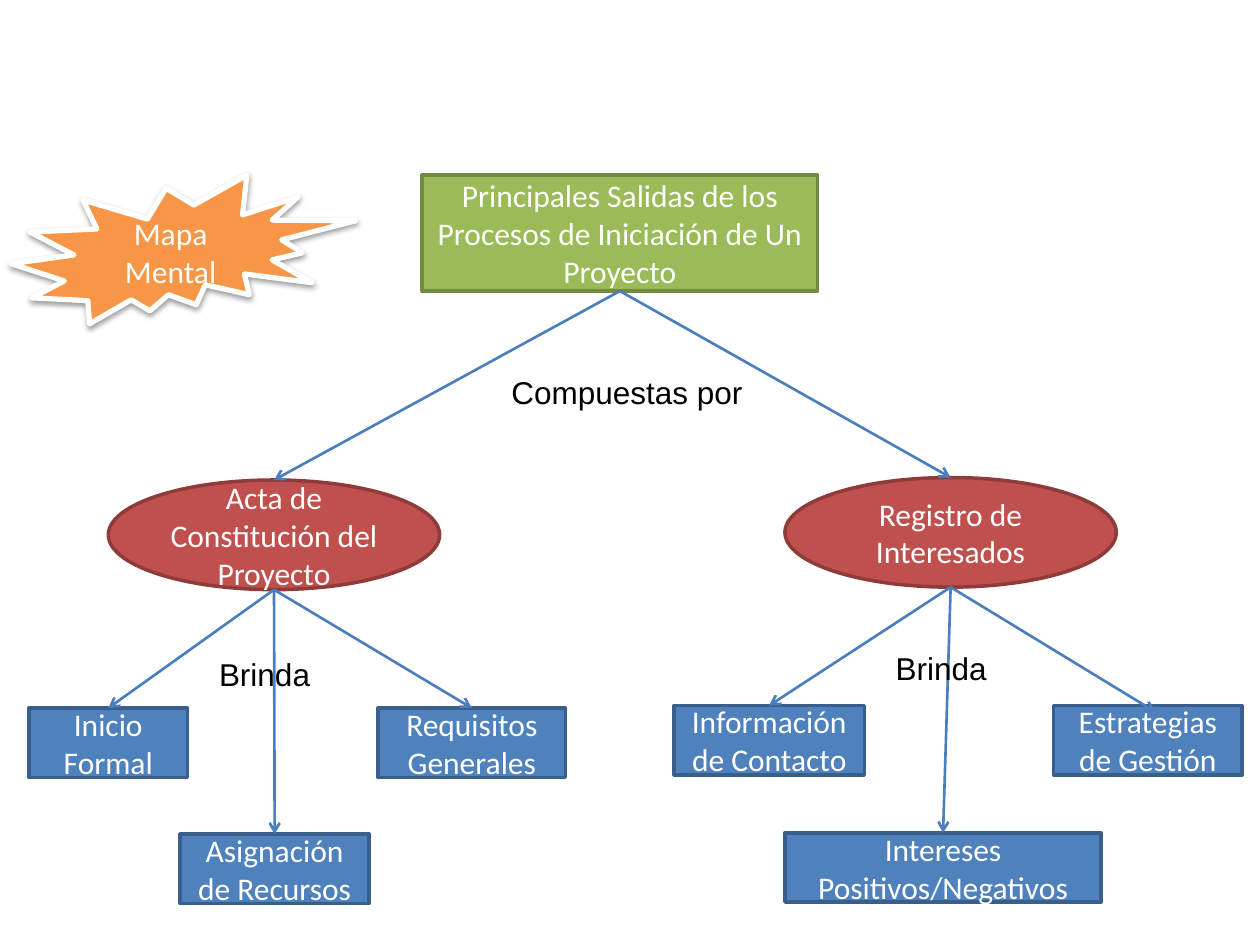
from pptx import Presentation, util as u
from pptx.dml.color import RGBColor
from pptx.enum import shapes, text
from pptx.oxml import parse_xml
from pptx.oxml.ns import nsdecls, qn

COLORS = {
    "root": ("9BBB59", "738A42"),
    "branch": ("C0504D", "8E3B39"),
    "leaf": ("4F81BD", "3A5F8C"),
    "title": ("F79646", "FFFFFF"),
    "arrow": "4B7EBC",
    "light": "FFFFFF",
    "dark": "000000",
}
COLUMNS, ROWS = 100, 75
TOP, BOTTOM = 0, 2
BRANCHES = [
    {
        "name": "Acta de Constitución del Proyecto",
        "box": (8.6, 38.1, 26.3, 8.7),
        "label": (16.4, 51.5, 10.7, 4),
        "leaves": [
            ("Inicio Formal", (2.3, 56.2, 12.6, 5.5), None),
            ("Asignación de Recursos", (14.3, 66.2, 15, 5.5), None),
            ("Requisitos Generales", (30, 56.2, 14.9, 5.5), None),
        ],
    },
    {
        "name": "Registro de Interesados",
        "box": (62.3, 37.9, 26.3, 8.7),
        "label": (70.1, 51, 10.7, 4),
        "leaves": [
            ("Información de Contacto", (53.5, 56, 15.1, 5.5), None),
            ("Intereses Positivos/Negativos", (62.3, 66.1, 25.1, 5.5), None),
            ("Estrategias de Gestión", (83.6, 56, 15, 5.5), (91.7, 56.5)),
        ],
    },
]


def write(shape, words, font="Calibri", size=18, color="light", align=text.PP_ALIGN.CENTER):
    """Put one formatted paragraph into a shape."""
    shape.text_frame.word_wrap = True
    paragraph = shape.text_frame.paragraphs[0]
    paragraph.text = words
    paragraph.alignment = align
    paragraph.font.name = font
    paragraph.font.size = u.Pt(size)
    paragraph.font.color.rgb = RGBColor.from_string(COLORS[color])


class MindMap:
    """Draw map elements on a slide measured in grid columns and rows."""

    def __init__(self, presentation):
        self.slide = presentation.slides.add_slide(presentation.slide_layouts[6])
        self.column = presentation.slide_width / COLUMNS
        self.row = presentation.slide_height / ROWS

    def place(self, *lengths):
        return [round(length * unit) for length, unit in zip(lengths, (self.column, self.row) * 2)]

    def node(self, kind, words, box, role, width=2):
        shape = self.slide.shapes.add_shape(kind, *self.place(*box))
        fill, line = COLORS[role]
        shape.fill.solid()
        shape.fill.fore_color.rgb = RGBColor.from_string(fill)
        shape.line.color.rgb = RGBColor.from_string(line)
        shape.line.width = u.Pt(width)
        shape.shadow.inherit = False
        shape.text_frame.vertical_anchor = text.MSO_ANCHOR.MIDDLE
        write(shape, words)
        return shape

    def burst(self, words, box):
        shape = self.node(shapes.MSO_SHAPE.EXPLOSION2, words, box, "title", width=3)
        shape._element.spPr.find(qn("a:effectLst")).append(parse_xml(
            f'<a:outerShdw {nsdecls("a")} blurRad="{u.Pt(3.1)}" dist="{u.Pt(1.6)}" dir="5400000" rotWithShape="0">'
            f'<a:srgbClr val="{COLORS["dark"]}"><a:alpha val="38000"/></a:srgbClr></a:outerShdw>'))

    def label(self, words, box):
        shape = self.slide.shapes.add_textbox(*self.place(*box))
        write(shape, words, font="Arial", color="dark", align=text.PP_ALIGN.LEFT)
        shape.text_frame.auto_size = text.MSO_AUTO_SIZE.SHAPE_TO_FIT_TEXT

    def arrow(self, parent, child, tip=None):
        start = parent.left + parent.width // 2, parent.top + parent.height
        end = self.place(*tip) if tip else (child.left + child.width // 2, child.top)
        connector = self.slide.shapes.add_connector(shapes.MSO_CONNECTOR.STRAIGHT, *start, *end)
        if parent.auto_shape_type == shapes.MSO_SHAPE.RECTANGLE:
            connector.begin_connect(parent, BOTTOM)
        if not tip:
            connector.end_connect(child, TOP)
        connector.line.color.rgb = RGBColor.from_string(COLORS["arrow"])
        connector.line.width = u.Pt(1.5)
        properties = connector._element.spPr
        properties.find(qn("a:ln")).append(parse_xml(f'<a:tailEnd {nsdecls("a")} type="arrow"/>'))
        properties.append(parse_xml(f'<a:effectLst {nsdecls("a")}/>'))


def main():
    presentation = Presentation()
    presentation.slide_width, presentation.slide_height = u.Inches(10), u.Inches(7.5)
    mind_map = MindMap(presentation)
    rectangle, oval = shapes.MSO_SHAPE.RECTANGLE, shapes.MSO_SHAPE.OVAL
    root = mind_map.node(rectangle, "Principales Salidas de los Procesos de Iniciación de Un Proyecto",
                         (33.5, 13.9, 31.4, 9.2), "root")
    for branch in BRANCHES:
        ellipse = mind_map.node(oval, branch["name"], branch["box"], "branch")
        mind_map.arrow(root, ellipse)
        for words, box, tip in branch["leaves"]:
            leaf = mind_map.node(rectangle, words, box, "leaf")
            mind_map.arrow(ellipse, leaf, tip)
        mind_map.label("Brinda", branch["label"])
    mind_map.label("Compuestas por", (39.6, 29.1, 25.2, 4))
    mind_map.burst("Mapa Mental", (0.9, 13.9, 27.3, 11.8))
    presentation.save("out.pptx")


if __name__ == "__main__":
    main()
